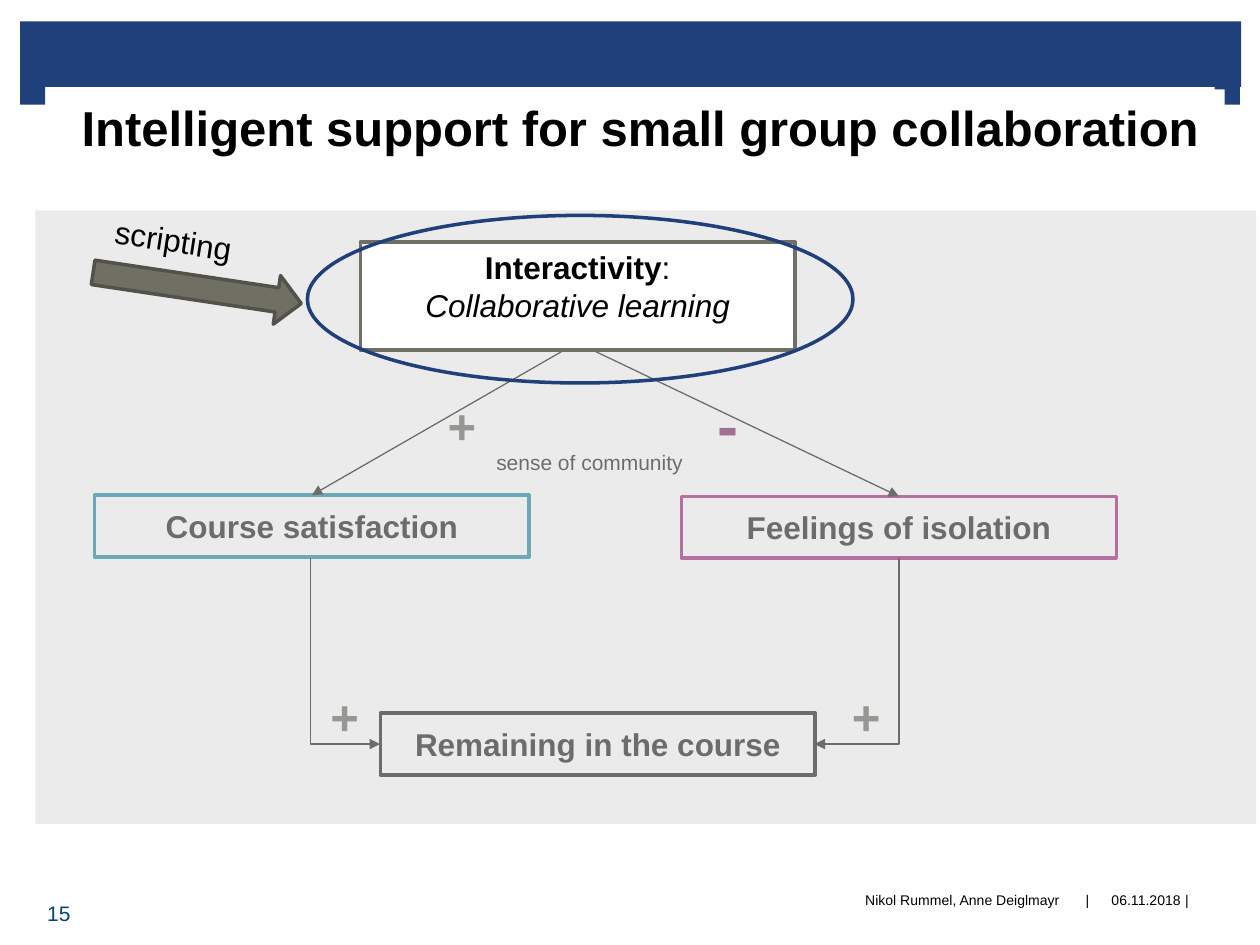
from lxml.etree import SubElement
from pptx import Presentation
from pptx.dml.color import RGBColor
from pptx.enum.shapes import MSO_CONNECTOR as LINK, MSO_SHAPE as SHAPE
from pptx.enum.text import MSO_ANCHOR as ANCHOR, PP_ALIGN as ALIGN
from pptx.oxml.ns import qn
from pptx.util import Inches, Pt

COLORS = {
    "navy": "1F407A", "white": "FFFFFF", "black": "000000", "blue": "004673",
    "plum": "91056A", "wine": "6D044F", "teal": "007A96", "moss": "6F6F64",
    "bark": "52524A", "stone": "53534B", "veil": "D9D9D9",
}
BOLD = {"bold": True}
MIDDLE = {"vertical_anchor": ANCHOR.MIDDLE}
TIGHT = {"margin_left": Inches(0.04), "margin_right": Inches(0.04), "word_wrap": False}
FLUSH = {"margin_left": 0, "margin_right": 0, "margin_top": 0, "margin_bottom": 0}

deck = Presentation()
deck.slide_width, deck.slide_height = Inches(10), Inches(7.5)
slide = deck.slides.add_slide(deck.slide_layouts[6])


def put(kind, place, fill=None, edge=None, lines=(), size=18, color="black",
        align=ALIGN.CENTER, frame={}, turn=0):
    spot = [Inches(n) for n in place]
    if kind is None:
        shape = slide.shapes.add_textbox(*spot)
    else:
        shape = slide.shapes.add_shape(kind, *spot)
        shape.shadow.inherit = False
    shape.rotation = turn
    if fill:
        shape.fill.solid()
        shape.fill.fore_color.rgb = RGBColor.from_string(COLORS[fill])
    else:
        shape.fill.background()
    if edge:
        shape.line.color.rgb = RGBColor.from_string(COLORS[edge])
        shape.line.width = Pt(2)
    else:
        shape.line.fill.background()
    text = shape.text_frame
    for name, value in {"word_wrap": True, "vertical_anchor": ANCHOR.TOP, **frame}.items():
        setattr(text, name, value)
    for i, line in enumerate(lines):
        para = text.add_paragraph() if i else text.paragraphs[0]
        para.alignment = align
        for words, style in line:
            run = para.add_run()
            run.text = words
            run.font.color.rgb = RGBColor.from_string(COLORS[color])
            for name, value in {"name": "Arial", "size": Pt(size), **style}.items():
                setattr(run.font, name, value)
    return shape


def link(kind, start, end):
    wire = slide.shapes.add_connector(kind, *[Inches(n) for n in (*start, *end)])
    wire.line.color.rgb = RGBColor.from_string(COLORS["black"])
    wire.line.width = Pt(0.75)
    props = wire._element.spPr
    SubElement(props.find(qn("a:ln")), qn("a:tailEnd"), type="triangle")
    SubElement(props, qn("a:effectLst"))
    return wire


for place in [(0.16, 0.17, 9.69, 0.52), (0.16, 0.65, 0.2, 0.18), (9.64, 0.65, 0.2, 0.18)]:
    put(SHAPE.RECTANGLE, place, "navy")
for left in (9.36, 8.57):
    put(None, (left, 6.89, 0.12, 0.51), lines=[[("|", {})]], size=8, frame={**MIDDLE, **TIGHT})
put(None, (0, 7.05, 0.56, 0.4), lines=[[("15", {})]], size=12, color="blue",
    align=ALIGN.RIGHT, frame={**MIDDLE, **FLUSH})

boxes = [
    put(SHAPE.RECTANGLE, (left, top, 3.45, 0.49), "white", edge, [[(words, BOLD)]], frame=MIDDLE)
    for words, left, top, edge in [
        ("Feelings of isolation", 5.41, 3.94, "plum"),
        ("Course satisfaction", 0.75, 3.93, "teal"),
        ("Remaining in the course", 3.02, 5.66, "black"),
    ]
]
for box in boxes[:2]:
    link(LINK.STRAIGHT, (4.58, 2.72), (7.13, 3.94)).end_connect(box, 0)
for start, end, turn in [((3.48, 4.89), (2, 5.44), 270), ((6.06, 4.83), (7.54, 5.5), 90)]:
    props = link(LINK.ELBOW, start, end)._element.spPr
    props.find(qn("a:prstGeom")).set("prst", "bentConnector2")
    props.find(qn("a:xfrm")).set("rot", str(turn * 60000))

put(None, (3.84, 3.52, 2.18, 0.37), lines=[[("sense of community", {})]], size=12, align=ALIGN.LEFT)
for sign, place, size, color in [
    ("-", (5.43, 3.01, 0.69, 0.86), 36, "wine"),
    ("+", (3.32, 3.09, 0.69, 0.69), 28, "stone"),
    ("+", (2.44, 5.4, 0.59, 0.57), 28, "stone"),
    ("+", (6.58, 5.4, 0.59, 0.57), 28, "stone"),
]:
    put(None, place, lines=[[(sign, BOLD)]], size=size, color=color)

veil = put(SHAPE.RECTANGLE, (0.28, 1.67, 9.69, 4.87), "veil")
tint = veil._element.spPr.find(qn("a:solidFill"))[0]
SubElement(tint, qn("a:alpha"), val="50000")

put(SHAPE.RECTANGLE, (2.86, 1.92, 3.45, 0.86), "white", "moss",
    [[("Interactivity", BOLD), (":", {})], [("Collaborative learning", {"italic": True})]])
put(SHAPE.OVAL, (2.44, 1.71, 4.33, 1.33), edge="navy")
put(SHAPE.RIGHT_ARROW, (0.73, 2.09, 1.67, 0.39), "moss", "bark", turn=8.5)
put(None, (0.81, 1.75, 1.71, 0.4), lines=[[("scripting", {})]], align=ALIGN.LEFT, turn=8.7)

put(None, (0.55, 0.71, 9.17, 0.59), "white",
    lines=[[("Intelligent support for small group collaboration", BOLD)]],
    size=28, align=ALIGN.LEFT, frame=MIDDLE)
for words, left, width in [("06.11.2018", 8.68, 0.79), ("Nikol Rummel, Anne Deiglmayr", 5, 3.51)]:
    put(None, (left, 7.03, width, 0.38), lines=[[(words, {})]], size=8, align=ALIGN.RIGHT)

deck.save("out.pptx")
